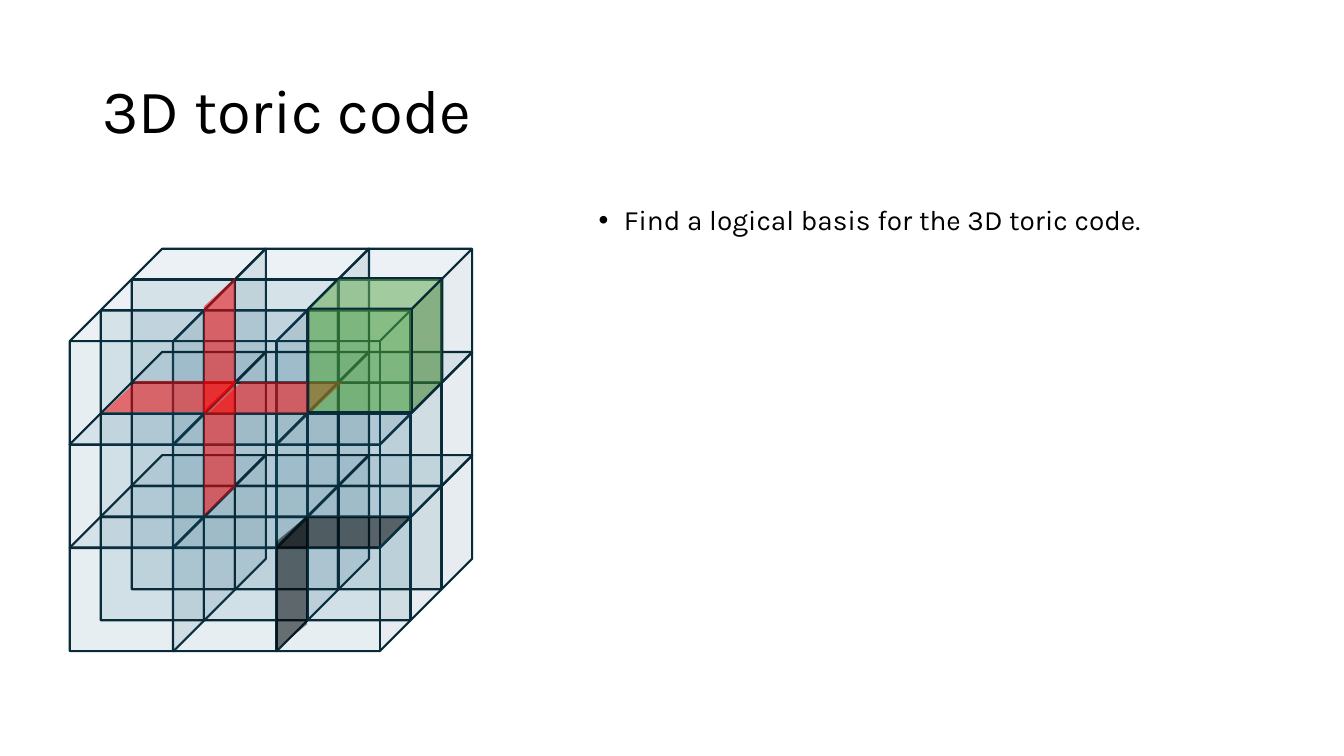
from dataclasses import dataclass
from itertools import product

from lxml import etree
from pptx import Presentation
from pptx import util as u
from pptx.dml.color import RGBColor
from pptx.enum import shapes, text
from pptx.oxml.ns import qn


@dataclass(frozen=True)
class Theme:
    font: str = "Karla"
    title_size: int = 44
    body_size: int = 20
    ink: str = "000000"
    lattice: str = "156082"
    edge: str = "092A39"
    edge_width: float = 1.5
    plaquette: str = "FF0000"
    cell: str = "4EA72E"


CELL = 2.6
DEPTH = 0.78
CUBE = CELL + DEPTH


class SlideBuilder:
    def __init__(self, page, theme):
        self.page = page
        self.theme = theme

    def place(self, box, left, top, width, height):
        box.left, box.top = u.Cm(left), u.Cm(top)
        box.width, box.height = u.Cm(width), u.Cm(height)

    def set_text(self, box, words, size, anchor):
        frame = box.text_frame
        frame.text = words
        frame.auto_size = text.MSO_AUTO_SIZE.NONE
        frame.vertical_anchor = anchor
        para = frame.paragraphs[0]
        para.alignment = text.PP_ALIGN.LEFT
        para.line_spacing = 0.9
        para.space_before = u.Pt(0)
        para.font.name = self.theme.font
        para.font.size = u.Pt(size)
        para.font.color.rgb = RGBColor.from_string(self.theme.ink)
        return para

    def title(self, words):
        box = self.page.shapes.title
        self.place(box, 2.33, 1.01, 29.21, 3.68)
        self.set_text(box, words, self.theme.title_size, text.MSO_ANCHOR.MIDDLE)

    def bullet(self, words):
        box = self.page.placeholders[1]
        self.place(box, 14.83, 5.08, 16.71, 12.09)
        para = self.set_text(box, words, self.theme.body_size, text.MSO_ANCHOR.TOP)
        properties = para._p.get_or_add_pPr()
        properties.set("marL", str(u.Cm(0.64)))
        properties.set("indent", str(u.Cm(-0.64)))
        mark = etree.Element(qn("a:buChar"), char="•")
        properties.find(qn("a:defRPr")).addprevious(mark)

    def group(self):
        return self.page.shapes.add_group_shape().shapes

    def solid(self, target, kind, left, top, height, adjustment, color, opacity):
        shape = target.add_shape(kind, u.Cm(left), u.Cm(top), u.Cm(CUBE), u.Cm(height))
        shape.shadow.inherit = False
        shape.adjustments[0] = adjustment
        shape.fill.solid()
        shape.fill.fore_color.rgb = RGBColor.from_string(color)
        fill = shape.element.spPr.find(qn("a:solidFill"))
        etree.SubElement(fill[0], qn("a:alpha"), val=str(opacity * 1000))
        return shape

    def cube(self, target, left, top, color, opacity):
        shape = self.solid(target, shapes.MSO_SHAPE.CUBE, left, top, CUBE, 0.227, color, opacity)
        shape.line.color.rgb = RGBColor.from_string(self.theme.edge)
        shape.line.width = u.Pt(self.theme.edge_width)

    def face(self, target, left, top, color, slant, upright=False):
        shape = self.solid(target, shapes.MSO_SHAPE.PARALLELOGRAM, left, top, DEPTH, slant, color, 50)
        shape.line.fill.background()
        if upright:
            shape.rotation = 270
            shape.element.spPr.find(qn("a:xfrm")).set("flipV", "1")


def main():
    deck = Presentation()
    deck.slide_width, deck.slide_height = u.Cm(33.87), u.Cm(19.05)
    theme = Theme()
    page = deck.slides.add_slide(deck.slide_layouts[1])
    slide = SlideBuilder(page, theme)

    slide.title("3D toric code")
    slide.bullet("Find a logical basis for the 3D toric code.")

    lattice = slide.group()
    for layer, row, column in product(range(3), repeat=3):
        left = 1.76 + column * CELL + layer * DEPTH
        top = 7.83 + row * CELL - layer * DEPTH
        slide.cube(lattice, left, top, theme.lattice, 10)

    slide.face(page.shapes, 6.96, 13.03, theme.ink, 1.058)
    slide.face(page.shapes, 5.66, 14.3, theme.ink, 0.833, upright=True)

    cross = slide.group()
    for left, top in ((2.62, 9.6), (5.26, 9.63)):
        slide.face(cross, left, top, theme.plaquette, 1.058)
    for top in (8.31, 10.92):
        slide.face(cross, 3.84, top, theme.plaquette, 0.909, upright=True)

    slide.cube(page.shapes, 7.77, 7.01, theme.cell, 50)
    deck.save("out.pptx")


if __name__ == "__main__":
    main()
